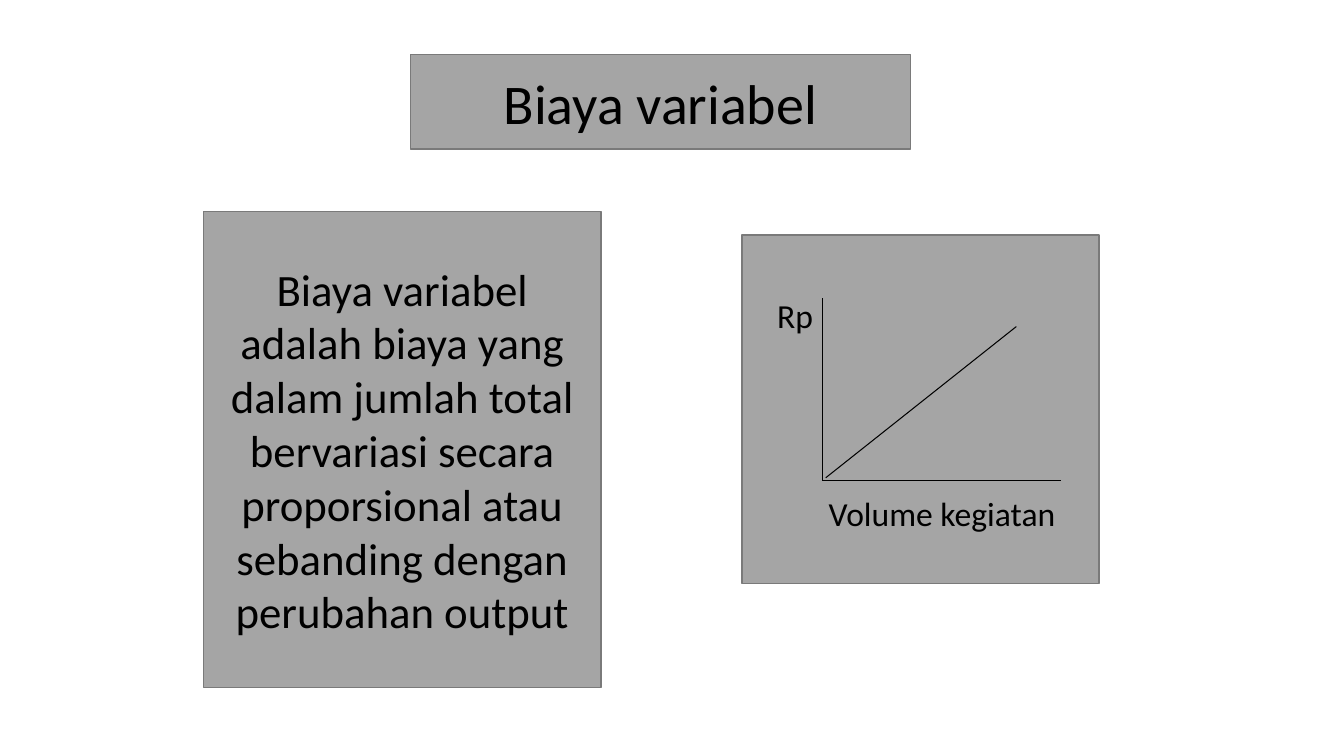
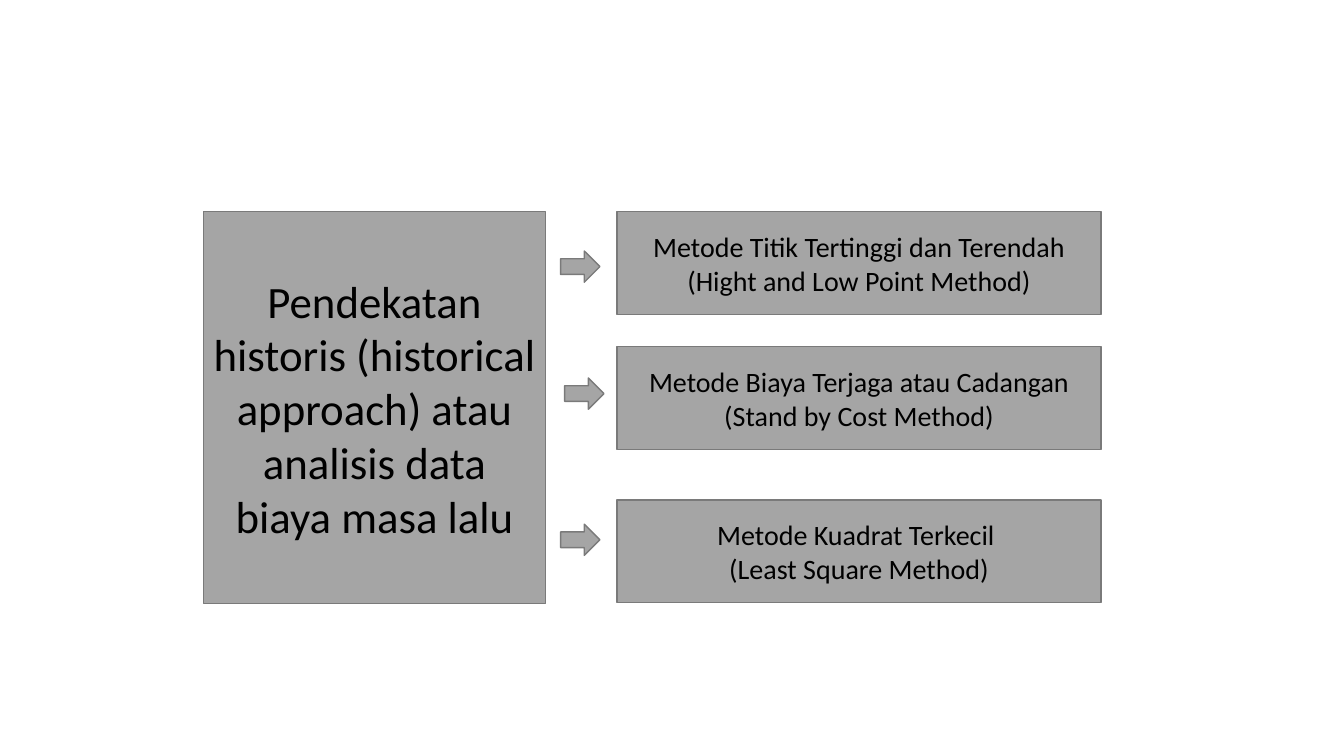
from lxml import etree
from pptx import Presentation, util as u
from pptx.dml.color import RGBColor
from pptx.enum import shapes, text
from pptx.oxml.ns import qn

PX = 9144
COLORS = {"fill": "A5A5A5", "border": "7A7A7A", "ink": "000000"}
FONT = "Calibri"
BOX_FRAME = {"word_wrap": True, "vertical_anchor": text.MSO_ANCHOR.MIDDLE}
LABEL_FRAME = {"word_wrap": True, "vertical_anchor": text.MSO_ANCHOR.TOP}
LEFT, TOP = 202, 210
METHODS = [
    (210, (556, 249), ["Metode Titik Tertinggi dan Terendah (Hight and Low Point Method)"]),
    (344, (560, 375), ["Metode Biaya Terjaga atau Cadangan (Stand by Cost Method)"]),
    (496, (556, 520), ["Metode Kuadrat Terkecil ", "(Least Square Method)"]),
]


def px(*values):
    return [u.Emu(value * PX) for value in values]


def color(name):
    return RGBColor.from_string(COLORS[name])


def apply(target, values):
    for name, value in values.items():
        setattr(target, name, value)


def write(shape, lines, size, frame_format, align):
    frame = shape.text_frame
    apply(frame, frame_format)
    for index, line in enumerate(lines):
        para = frame.add_paragraph() if index else frame.paragraphs[0]
        para.alignment = align
        span = para.add_run()
        span.text = line
        apply(span.font, {"name": FONT, "size": u.Pt(size)})
        span.font.color.rgb = color("ink")


def add_block(page, kind, *place):
    block = page.shapes.add_shape(kind, *px(*place))
    block.shadow.inherit = False
    block.fill.solid()
    block.fill.fore_color.rgb = color("fill")
    block.line.color.rgb = color("border")
    block.line.width = u.Pt(1)
    return block


def add_box(page, place, lines=(), size=20):
    box = add_block(page, shapes.MSO_SHAPE.RECTANGLE, *place)
    write(box, lines, size, BOX_FRAME, text.PP_ALIGN.CENTER)


def add_label(page, place, words):
    label = page.shapes.add_textbox(*px(*place))
    write(label, [words], 24, LABEL_FRAME, text.PP_ALIGN.LEFT)


def add_line(page, start, end):
    line = page.shapes.add_connector(shapes.MSO_CONNECTOR.STRAIGHT, *px(*start, *end))
    line.line.color.rgb = color("ink")
    line.line.width = u.Pt(0.75)
    etree.SubElement(line.element.spPr, qn("a:effectLst"))


def add_cost_graph(page):
    add_box(page, (736, 233, 354, 346))
    origin = (816, 477)
    add_line(page, (816, 296), origin)
    add_line(page, origin, (1052, 477))
    add_line(page, (819, 474), (1008, 324))
    add_label(page, (761, 288, 71, 50), "Rp")
    add_label(page, (812, 484, 299, 50), "Volume kegiatan")


def build_variable_cost(page):
    add_box(page, (407, 54, 496, 94), ["Biaya variabel"], 40)
    add_box(page, (LEFT, TOP, 394, 472), [
        "Biaya variabel adalah biaya yang dalam jumlah total bervariasi "
        "secara proporsional atau sebanding dengan perubahan output"], 32)
    add_cost_graph(page)


def build_historical_approach(page):
    add_box(page, (LEFT, TOP, 339, 389), [
        "Pendekatan historis (historical approach) atau "
        "analisis data biaya masa lalu"], 32)
    for top, arrow, lines in METHODS:
        add_box(page, (612, top, 480, 102), lines)
        add_block(page, shapes.MSO_SHAPE.RIGHT_ARROW, *arrow, 39, 31)


def main():
    deck = Presentation()
    deck.slide_width, deck.slide_height = px(1333, 750)
    for build in (build_variable_cost, build_historical_approach):
        build(deck.slides.add_slide(deck.slide_layouts[6]))
    deck.save("out.pptx")


if __name__ == "__main__":
    main()
